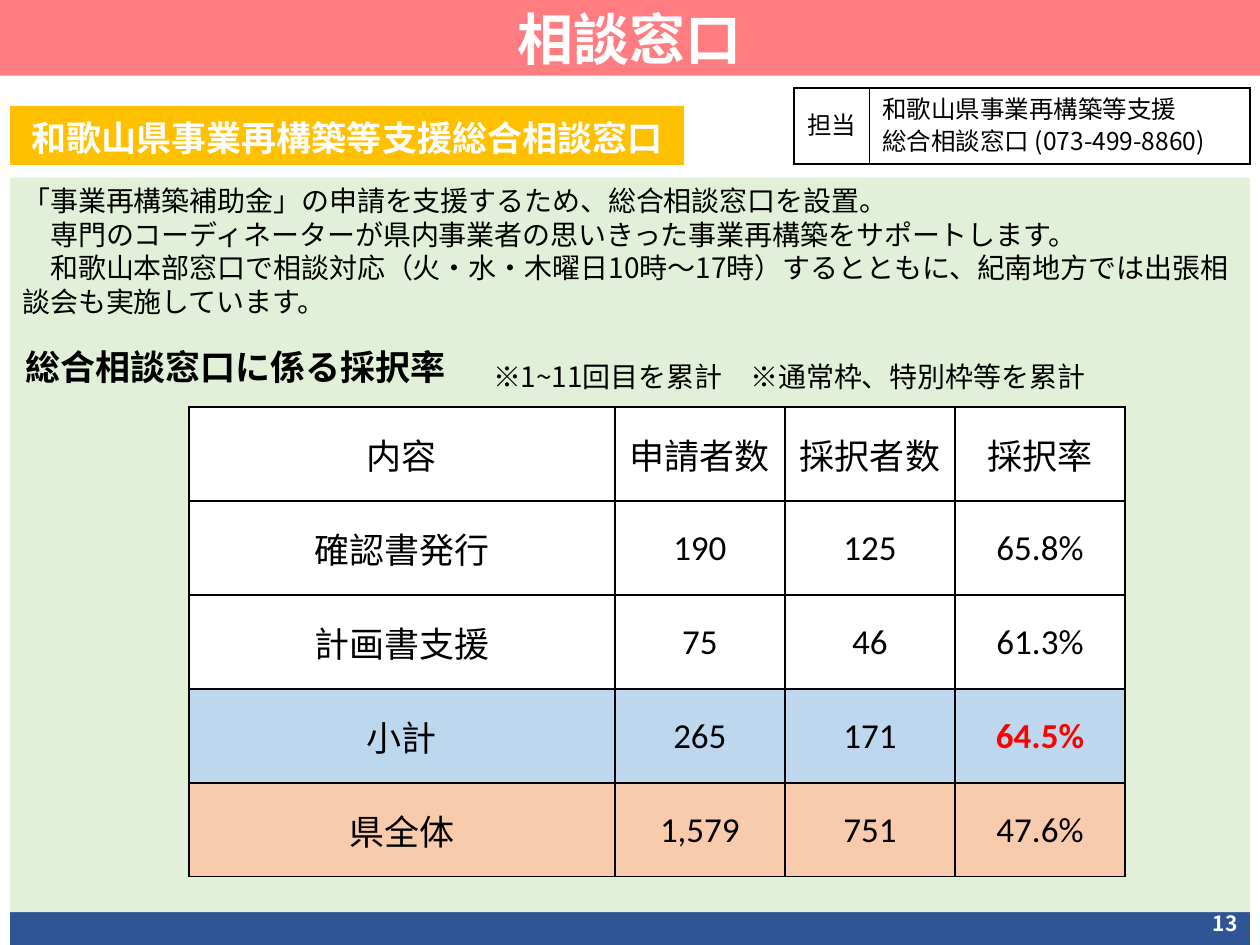
"""Build the slide on the consultation desk and its adoption rates."""
import pptx
import pptx.util
import pptx.dml.color
import pptx.enum.shapes
import pptx.enum.text
import pptx.oxml.ns
import lxml.etree

Inches = pptx.util.Inches
Pt = pptx.util.Pt
color = pptx.dml.color.RGBColor.from_string
qn = pptx.oxml.ns.qn
LEFT, CENTER, RIGHT = (pptx.enum.text.PP_ALIGN.LEFT, pptx.enum.text.PP_ALIGN.CENTER,
                       pptx.enum.text.PP_ALIGN.RIGHT)
TOP, MIDDLE = pptx.enum.text.MSO_ANCHOR.TOP, pptx.enum.text.MSO_ANCHOR.MIDDLE
JAPANESE = "Noto Sans CJK JP"


def write_text(text_frame, text, size, hex_color="000000", bold=False, align=CENTER, font=JAPANESE):
    """Set the text and format every paragraph and run."""
    text_frame.text = text
    for paragraph in text_frame.paragraphs:
        paragraph.alignment = align
        for run in paragraph.runs:
            run.font.size = Pt(size)
            run.font.bold = bold
            run.font.name = font
            run.font.color.rgb = color(hex_color)
            east_asian = lxml.etree.SubElement(run.font._element, qn("a:ea"))
            east_asian.set("typeface", JAPANESE)


def style_cell(cell, hex_fill):
    """Give a table cell black borders, a fill and middle anchoring."""
    properties = cell._tc.get_or_add_tcPr()
    for side in ("a:lnL", "a:lnR", "a:lnT", "a:lnB"):
        line = lxml.etree.SubElement(properties, qn(side), w=str(Pt(1)))
        fill = lxml.etree.SubElement(line, qn("a:solidFill"))
        lxml.etree.SubElement(fill, qn("a:srgbClr"), val="000000")
    cell.fill.solid()
    cell.fill.fore_color.rgb = color(hex_fill)
    cell.vertical_anchor = MIDDLE


presentation = pptx.Presentation()
presentation.slide_width = Inches(10)
presentation.slide_height = Inches(7.5)
slide = presentation.slides.add_slide(presentation.slide_layouts[5])

title = slide.shapes.title
title.left, title.top, title.width, title.height = Inches(0), Inches(0), Inches(10), Inches(0.6)
title.fill.solid()
title.fill.fore_color.rgb = color("FF7C80")
title.text_frame.vertical_anchor = MIDDLE
write_text(title.text_frame, "相談窓口", 32, "FFFFFF", True)

introduction = """「事業再構築補助金」の申請を支援するため、総合相談窓口を設置。
　専門のコーディネーターが県内事業者の思いきった事業再構築をサポートします。
　和歌山本部窓口で相談対応（火・水・木曜日10時～17時）するとともに、紀南地方では出張相談会も実施しています。"""
panels = [
    (7.19, 9.84, 0.31, "2F5597", "", 12, "FFFFFF", False, LEFT, TOP, 0.05),
    (1.41, 9.84, 5.83, "E2F0D9", introduction, 16, "000000", False, LEFT, TOP, 0.05),
    (0.84, 5.35, 0.47, "FFC000", "和歌山県事業再構築等支援総合相談窓口", 20, "FFFFFF", True,
     CENTER, MIDDLE, 0.08),
]
for top, width, height, hex_fill, text, size, hex_color, bold, align, anchor, inset in panels:
    panel = slide.shapes.add_shape(pptx.enum.shapes.MSO_SHAPE.RECTANGLE, Inches(0.08), Inches(top),
                                   Inches(width), Inches(height))
    panel.shadow.inherit = False
    panel.fill.solid()
    panel.fill.fore_color.rgb = color(hex_fill)
    panel.line.fill.background()
    panel.text_frame.word_wrap = True
    panel.text_frame.vertical_anchor = anchor
    panel.text_frame.margin_top = Inches(inset)
    if text:
        write_text(panel.text_frame, text, size, hex_color, bold, align)

labels = [
    (9.45, 7.15, 0.47, 0.35, "13", 12, "FFFFFF", True, RIGHT, 0.05),
    (0.08, 2.66, 3.58, 0.47, "総合相談窓口に係る採択率", 20, "000000", True, CENTER, 0.08),
    (3.61, 2.77, 5.31, 0.4, "※1~11回目を累計　※通常枠、特別枠等を累計", 16, "000000", False,
     CENTER, 0.08),
]
for left, top, width, height, text, size, hex_color, bold, align, inset in labels:
    label = slide.shapes.add_textbox(Inches(left), Inches(top), Inches(width), Inches(height))
    label.text_frame.word_wrap = True
    label.text_frame.vertical_anchor = MIDDLE
    label.text_frame.margin_top = Inches(inset)
    write_text(label.text_frame, text, size, hex_color, bold, align)

contact_table = slide.shapes.add_table(1, 2, Inches(6.3), Inches(0.7), Inches(3.62), Inches(0.6)).table
contact_columns = [
    (0.6, "担当", CENTER),
    (3.02, "和歌山県事業再構築等支援\v総合相談窓口 (073-499-8860)", LEFT),
]
for column, (width, text, align) in enumerate(contact_columns):
    contact_table.columns[column].width = Inches(width)
    cell = contact_table.cell(0, column)
    style_cell(cell, "FFFFFF")
    write_text(cell.text_frame, text, 14, align=align)
    cell.text_frame.paragraphs[0].line_spacing = Pt(18)

rate_rows = [
    ("FFFFFF", "内容", "申請者数", "採択者数", "採択率"),
    ("FFFFFF", "確認書発行", "190", "125", "65.8%"),
    ("FFFFFF", "計画書支援", "75", "46", "61.3%"),
    ("BDD7EE", "小計", "265", "171", "64.5%"),
    ("F8CBAD", "県全体", "1,579", "751", "47.6%"),
]
rate_table = slide.shapes.add_table(5, 4, Inches(1.5), Inches(3.23), Inches(7.43), Inches(3.73)).table
for column, width in enumerate((3.38, 1.35, 1.35, 1.35)):
    rate_table.columns[column].width = Inches(width)
for row, (hex_fill, *texts) in enumerate(rate_rows):
    for column, text in enumerate(texts):
        cell = rate_table.cell(row, column)
        style_cell(cell, hex_fill)
        cell.margin_left = cell.margin_right = cell.margin_top = Inches(0.01)
        cell.margin_bottom = Inches(0)
        highlighted = text == "64.5%"
        write_text(cell.text_frame, text, 20, "FF0000" if highlighted else "000000", highlighted,
                   font="Calibri" if row else JAPANESE)

presentation.save("out.pptx")
